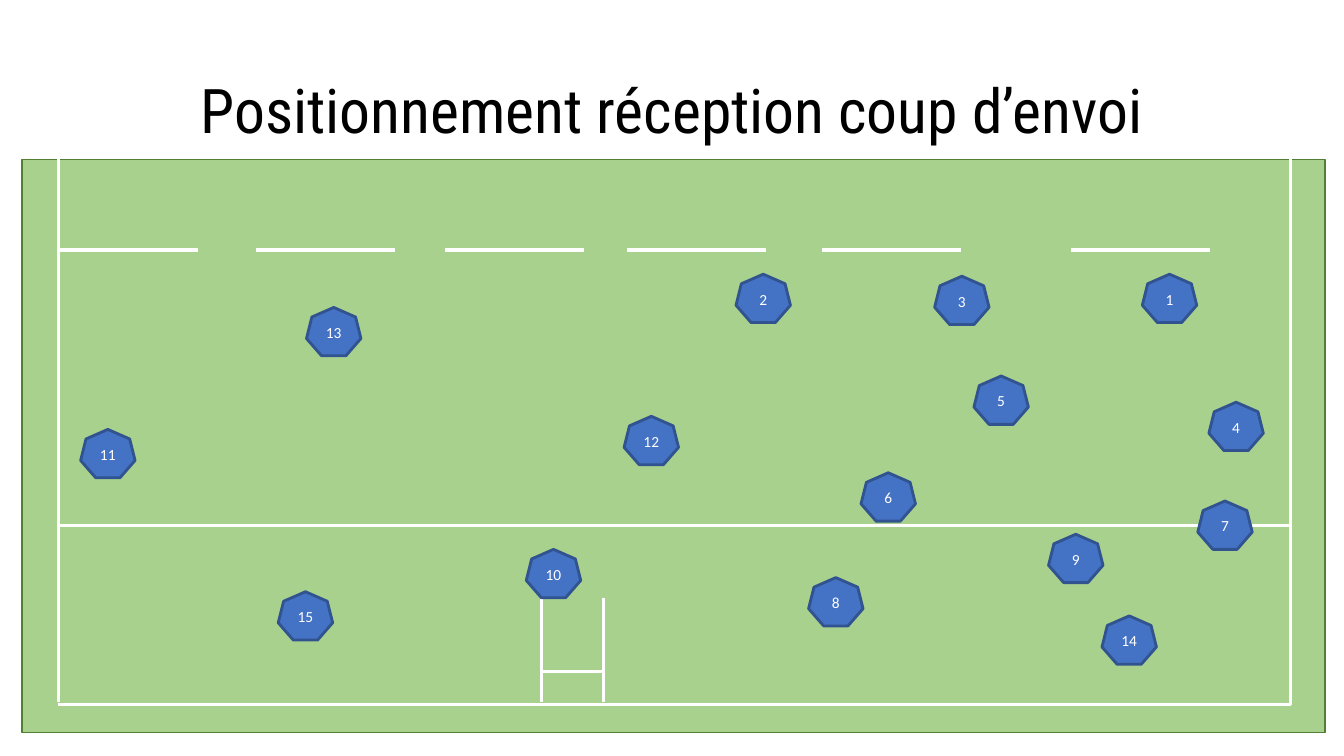
from collections import namedtuple

from lxml import etree
from pptx import Presentation
from pptx.dml.color import RGBColor
from pptx.enum.shapes import MSO_CONNECTOR, MSO_SHAPE
from pptx.enum.text import MSO_ANCHOR, PP_ALIGN
from pptx.oxml.ns import qn
from pptx.util import Inches, Pt

COLORS = {
    "title": "000000",
    "grass": "A9D18E",
    "grass_edge": "527F34",
    "marking": "FFFFFF",
    "player": "4472C4",
    "player_edge": "31538F",
    "number": "FFFFFF",
}

Box = namedtuple("Box", "left top width height")
TITLE_BOX = Box(0.92, 0.4, 11.5, 1.45)
PITCH_BOX = Box(0.22, 1.58, 12.92, 5.69)

# Distances in inches from the top left corner of the pitch
LEFT_TOUCH, RIGHT_TOUCH = 0.36, 12.58
TEN_METRE, TWENTY_TWO, GOAL_LINE = 0.9, 3.63, 5.41
DASH_LENGTH = 1.38
DASH_STARTS = (LEFT_TOUCH, 2.32, 4.19, 6.0, 7.93, 10.4)
LEFT_POST, RIGHT_POST = 5.15, 5.77
POST_TOP, CROSSBAR, POST_FOOT = 4.35, 5.08, 5.38
PLAYER_WIDTH, PLAYER_HEIGHT = 0.54, 0.48
PLAYERS = {
    6: (8.32, 3.11), 9: (10.18, 3.72), 14: (10.71, 4.53),
    7: (11.66, 3.39), 4: (11.77, 2.41), 5: (9.44, 2.15),
    1: (11.11, 1.14), 3: (9.05, 1.16), 2: (7.08, 1.14),
    11: (0.58, 2.68), 15: (2.54, 4.29), 13: (2.82, 1.47),
    10: (5.0, 3.87), 12: (5.97, 2.55), 8: (7.8, 4.15),
}


def color(name):
    return RGBColor.from_string(COLORS[name])


def format_text(frame, font, size, color_name, spacing):
    frame.word_wrap = True
    frame.vertical_anchor = MSO_ANCHOR.MIDDLE
    para = frame.paragraphs[0]
    para.alignment = PP_ALIGN.CENTER
    para.line_spacing = spacing
    span = para.runs[0]
    span.font.name = font
    span.font.size = Pt(size)
    span.font.color.rgb = color(color_name)


def add_filled_shape(page, kind, box, fill, edge, edge_width):
    shape = page.shapes.add_shape(kind, *map(Inches, box))
    shape.shadow.inherit = False
    shape.fill.solid()
    shape.fill.fore_color.rgb = color(fill)
    shape.line.color.rgb = color(edge)
    shape.line.width = Pt(edge_width)
    return shape


def add_title(page, box):
    title = page.shapes.title
    title.left, title.top, title.width, title.height = map(Inches, box)
    title.text_frame.text = "Positionnement réception coup d’envoi"
    format_text(title.text_frame, "Roboto Condensed", 44, "title", 0.9)


def add_marking(page, box, x1, y1, x2, y2):
    """Draw a white line between two points measured from the box corner."""
    line = page.shapes.add_connector(
        MSO_CONNECTOR.STRAIGHT,
        Inches(box.left + x1), Inches(box.top + y1),
        Inches(box.left + x2), Inches(box.top + y2))
    line.line.color.rgb = color("marking")
    line.line.width = Pt(2.25)
    etree.SubElement(line._element.spPr, qn("a:effectLst"))


def add_pitch(page, box):
    add_filled_shape(page, MSO_SHAPE.RECTANGLE, box, "grass", "grass_edge", 1)
    markings = [
        (LEFT_TOUCH, -0.04, LEFT_TOUCH, POST_FOOT),
        (RIGHT_TOUCH, 0, RIGHT_TOUCH, GOAL_LINE),
        (LEFT_TOUCH, GOAL_LINE, RIGHT_TOUCH, GOAL_LINE),
        (LEFT_POST, POST_TOP, LEFT_POST, POST_FOOT),
        (RIGHT_POST, POST_TOP, RIGHT_POST, POST_FOOT),
        (LEFT_POST, CROSSBAR, RIGHT_POST, CROSSBAR),
        (LEFT_TOUCH, TWENTY_TWO, RIGHT_TOUCH, TWENTY_TWO),
    ]
    markings += [(start, TEN_METRE, start + DASH_LENGTH, TEN_METRE)
                 for start in DASH_STARTS]
    for marking in markings:
        add_marking(page, box, *marking)


def add_players(page, box):
    for number, (x, y) in PLAYERS.items():
        player_box = Box(box.left + x, box.top + y, PLAYER_WIDTH, PLAYER_HEIGHT)
        player = add_filled_shape(page, MSO_SHAPE.HEPTAGON, player_box,
                                  "player", "player_edge", 2)
        player.text_frame.text = str(number)
        format_text(player.text_frame, "Calibri", 11, "number", 1.07)


def main():
    deck = Presentation()
    deck.slide_width, deck.slide_height = Inches(13.33), Inches(7.5)
    title_only = deck.slide_layouts.get_by_name("Title Only")
    page = deck.slides.add_slide(title_only)
    add_title(page, TITLE_BOX)
    add_pitch(page, PITCH_BOX)
    add_players(page, PITCH_BOX)
    deck.save("out.pptx")


if __name__ == "__main__":
    main()
